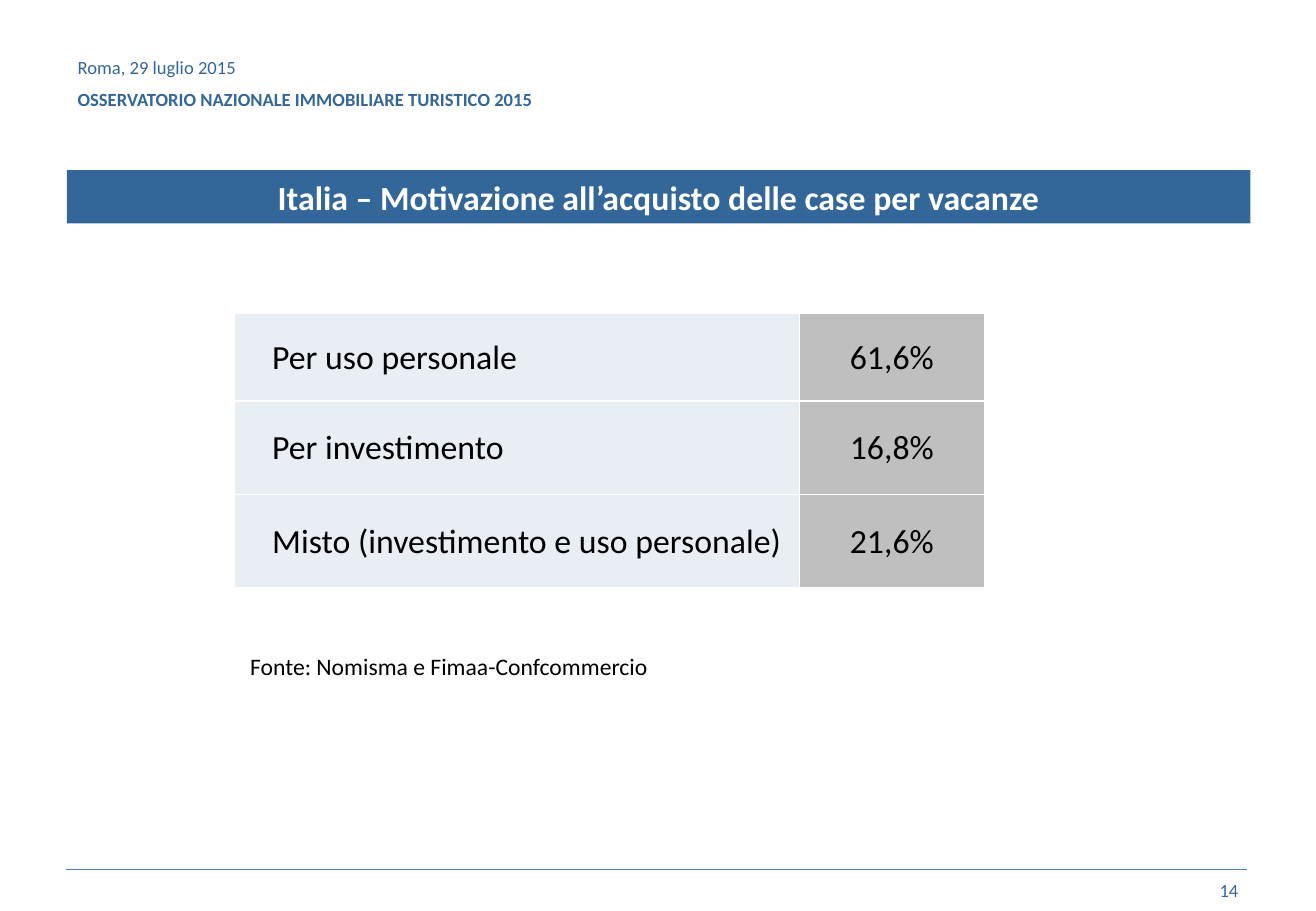
import dataclasses
import typing

import lxml.etree
import pptx
import pptx.dml.color
import pptx.enum.shapes
import pptx.enum.text
import pptx.oxml.ns
import pptx.util

EMU_PER_PX = 9144  # 100 px to the inch
ALIGN = pptx.enum.text.PP_ALIGN
ANCHOR = pptx.enum.text.MSO_ANCHOR


@dataclasses.dataclass(frozen=True)
class Theme:
    font: str = "Calibri"
    blue: str = "336699"
    rule: str = "4F81BD"
    black: str = "000000"
    white: str = "FFFFFF"
    label_fill: str = "E9EDF4"
    value_fill: str = "BFBFBF"
    small: int = 11
    source: int = 14
    large: int = 20


THEME = Theme()


class Box(typing.NamedTuple):
    left: int
    top: int
    width: int
    height: int


class Motivation(typing.NamedTuple):
    label: str
    share: str
    row_height: int


MOTIVATIONS = [
    Motivation("Per uso personale", "61,6%", 72),
    Motivation("Per investimento", "16,8%", 77),
    Motivation("Misto (investimento e uso personale)", "21,6%", 77),
]


def px(length: int) -> pptx.util.Emu:
    return pptx.util.Emu(length * EMU_PER_PX)


def place(box: Box) -> list[pptx.util.Emu]:
    return [px(length) for length in box]


def rgb(color: str) -> pptx.dml.color.RGBColor:
    return pptx.dml.color.RGBColor.from_string(color)


def paint(target: typing.Any, color: str) -> None:
    target.fill.solid()
    target.fill.fore_color.rgb = rgb(color)


def write(paragraph: typing.Any, text: str, *, size: int, color: str, bold: bool = False,
          align: ALIGN = ALIGN.LEFT, space_before: int = 0, indent: int = 0) -> None:
    paragraph.alignment = align
    paragraph.space_before = pptx.util.Pt(space_before)
    if indent:
        properties = paragraph._p.get_or_add_pPr()
        properties.set("marL", "0")
        properties.set("indent", str(px(indent)))
    run = paragraph.add_run()
    run.text = text
    run.font.name = THEME.font
    run.font.size = pptx.util.Pt(size)
    run.font.bold = bold
    run.font.color.rgb = rgb(color)


def add_text_frame(slide: typing.Any, box: Box, anchor: ANCHOR) -> typing.Any:
    frame = slide.shapes.add_textbox(*place(box)).text_frame
    frame.word_wrap = True
    frame.vertical_anchor = anchor
    return frame


def add_title_bar(slide: typing.Any, box: Box, text: str) -> None:
    shape = slide.shapes.add_shape(pptx.enum.shapes.MSO_SHAPE.RECTANGLE, *place(box))
    shape.shadow.inherit = False
    paint(shape, THEME.blue)
    shape.line.fill.background()
    shape.text_frame.word_wrap = True
    shape.text_frame.vertical_anchor = ANCHOR.MIDDLE
    write(shape.text_frame.paragraphs[0], text, size=THEME.large, color=THEME.white,
          bold=True, align=ALIGN.CENTER)


def add_footer_rule(slide: typing.Any, left: int, right: int, top: int) -> None:
    connector = slide.shapes.add_connector(
        pptx.enum.shapes.MSO_CONNECTOR.STRAIGHT, px(left), px(top), px(right), px(top))
    connector.line.color.rgb = rgb(THEME.rule)
    connector.line.width = pptx.util.Pt(0.25)
    lxml.etree.SubElement(connector._element.spPr, pptx.oxml.ns.qn("a:effectLst"))


def format_cell(cell: typing.Any, fill: str) -> None:
    """Give the cell white borders, narrow margins and its fill."""
    properties = cell._tc.get_or_add_tcPr()
    for side in ("a:lnL", "a:lnR", "a:lnT", "a:lnB"):
        border = lxml.etree.SubElement(
            properties, pptx.oxml.ns.qn(side), w=str(pptx.util.Pt(1)))
        solid = lxml.etree.SubElement(border, pptx.oxml.ns.qn("a:solidFill"))
        lxml.etree.SubElement(solid, pptx.oxml.ns.qn("a:srgbClr"), val=THEME.white)
    paint(cell, fill)
    cell.vertical_anchor = ANCHOR.MIDDLE
    cell.margin_left = cell.margin_right = cell.margin_top = px(1)
    cell.margin_bottom = 0


def add_motivation_table(slide: typing.Any, left: int, top: int,
                         column_widths: tuple[int, int]) -> None:
    height = sum(motivation.row_height for motivation in MOTIVATIONS)
    box = Box(left, top, sum(column_widths), height)
    table = slide.shapes.add_table(len(MOTIVATIONS), len(column_widths), *place(box)).table
    table.first_row = table.horz_banding = False
    for column, width in zip(table.columns, column_widths):
        column.width = px(width)
    for row, motivation in zip(table.rows, MOTIVATIONS):
        row.height = px(motivation.row_height)
        label, share = row.cells
        format_cell(label, THEME.label_fill)
        format_cell(share, THEME.value_fill)
        write(label.text_frame.paragraphs[0], motivation.label, size=THEME.large,
              color=THEME.black, indent=30)
        write(share.text_frame.paragraphs[0], motivation.share, size=THEME.large,
              color=THEME.black, align=ALIGN.CENTER)


def main() -> None:
    presentation = pptx.Presentation()
    presentation.slide_width, presentation.slide_height = px(1083), px(750)
    slide = presentation.slides.add_slide(presentation.slide_layouts[6])

    add_footer_rule(slide, left=54, right=1026, top=716)
    header = add_text_frame(slide, Box(54, 30, 803, 77), ANCHOR.MIDDLE)
    write(header.paragraphs[0], "Roma, 29 luglio 2015", size=THEME.small, color=THEME.blue)
    write(header.add_paragraph(), "OSSERVATORIO NAZIONALE IMMOBILIARE TURISTICO 2015",
          size=THEME.small, color=THEME.blue, bold=True, space_before=6)

    source = add_text_frame(slide, Box(196, 532, 428, 34), ANCHOR.TOP)
    write(source.paragraphs[0], "Fonte: Nomisma e Fimaa-Confcommercio",
          size=THEME.source, color=THEME.black)
    page_number = add_text_frame(slide, Box(776, 716, 253, 34), ANCHOR.MIDDLE)
    write(page_number.paragraphs[0], "14", size=THEME.small, color=THEME.blue,
          align=ALIGN.RIGHT)

    add_title_bar(slide, Box(55, 140, 974, 44),
                  "Italia – Motivazione all’acquisto delle case per vacanze")
    add_motivation_table(slide, left=193, top=258, column_widths=(465, 152))
    presentation.save("out.pptx")


if __name__ == "__main__":
    main()
